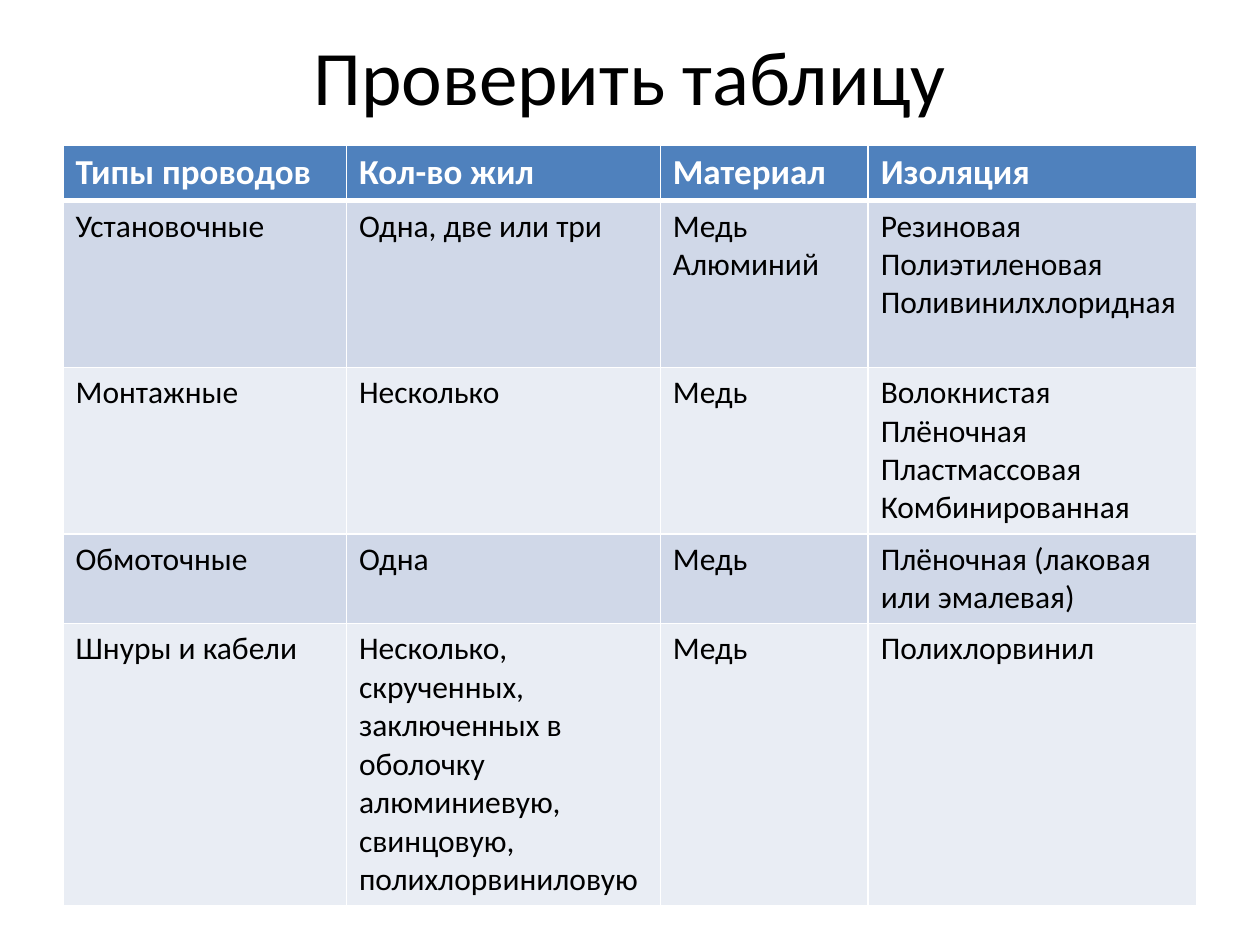
"""Build a slide with a table of wire types."""
from dataclasses import dataclass

from lxml import etree
from pptx import Presentation
from pptx.dml.color import RGBColor
from pptx.enum.text import MSO_ANCHOR, PP_ALIGN
from pptx.oxml.ns import qn
from pptx.slide import Slide
from pptx.table import Table, _Cell
from pptx.text.text import TextFrame
from pptx.util import Pt

LEFT, CENTER = PP_ALIGN.LEFT, PP_ALIGN.CENTER
TOP, MIDDLE = MSO_ANCHOR.TOP, MSO_ANCHOR.MIDDLE


@dataclass(frozen=True)
class Theme:
    font: str = "Calibri"
    black: str = "000000"
    white: str = "FFFFFF"
    head: str = "4F81BD"
    bands: tuple[str, str] = ("D0D8E8", "E9EDF4")
    title_size: float = 44
    head_size: float = 20
    body_size: float = 18
    thin: float = 1
    thick: float = 3


@dataclass(frozen=True)
class Row:
    cells: tuple[str, ...]
    lines: int


THEME = Theme()
TITLE = "Проверить таблицу"
WIDTHS = (162, 179.3, 118.8, 187.9)
HEAD_HIGH, LINE_HIGH, ROW_PAD = 31.6, 22, 7.2
HEAD = ("Типы проводов", "Кол-во жил", "Материал", "Изоляция")
ROWS = (
    Row(("Установочные", "Одна, две или три", "Медь\nАлюминий",
         "Резиновая\nПолиэтиленовая\nПоливинилхлоридная"), 4),
    Row(("Монтажные", "Несколько", "Медь",
         "Волокнистая\nПлёночная\nПластмассовая\nКомбинированная"), 4),
    Row(("Обмоточные", "Одна", "Медь", "Плёночная (лаковая или эмалевая)"), 2),
    Row(("Шнуры и кабели",
         "Несколько,\nскрученных, заключенных в оболочку алюминиевую, "
         "свинцовую, полихлорвиниловую", "Медь", "Полихлорвинил"), 7),
)


def write(frame: TextFrame, text: str, *, size: float, color: str = THEME.black,
          bold: bool = False, align: PP_ALIGN = LEFT) -> None:
    frame.text = text
    frame.word_wrap = True
    for para in frame.paragraphs:
        para.alignment = align
        for run in para.runs:
            font = run.font
            font.name, font.size, font.bold = THEME.font, Pt(size), bold
            font.color.rgb = RGBColor.from_string(color)


def edge(cell: _Cell, top: float, base: float) -> None:
    props = cell._tc.get_or_add_tcPr()
    sides = {"L": THEME.thin, "R": THEME.thin, "T": top, "B": base}
    for side, width in sides.items():
        line = etree.SubElement(props, qn(f"a:ln{side}"), w=str(Pt(width)))
        fill = etree.SubElement(line, qn("a:solidFill"))
        etree.SubElement(fill, qn("a:srgbClr"), val=THEME.white)


def draw_row(table: Table, index: int, cells: tuple[str, ...], high: float) -> None:
    table.rows[index].height = Pt(high)
    head = index == 0
    back = THEME.head if head else THEME.bands[(index - 1) % 2]
    for cell, text in zip(table.rows[index].cells, cells):
        edge(cell, THEME.thick if index == 1 else THEME.thin,
             THEME.thick if head else THEME.thin)
        cell.fill.solid()
        cell.fill.fore_color.rgb = RGBColor.from_string(back)
        cell.vertical_anchor = TOP
        write(cell.text_frame, text, bold=head,
              size=THEME.head_size if head else THEME.body_size,
              color=THEME.white if head else THEME.black)


def draw_title(slide: Slide) -> None:
    title = slide.shapes.title
    title.left, title.top = Pt(36), Pt(-2.2)
    title.width, title.height = Pt(648), Pt(90)
    title.text_frame.vertical_anchor = MIDDLE
    write(title.text_frame, TITLE, size=THEME.title_size, align=CENTER)


def draw_table(slide: Slide) -> None:
    highs = [HEAD_HIGH] + [row.lines * LINE_HIGH + ROW_PAD for row in ROWS]
    table = slide.shapes.add_table(
        len(highs), len(WIDTHS), Pt(36), Pt(83), Pt(sum(WIDTHS)), Pt(sum(highs))).table
    for column, width in zip(table.columns, WIDTHS):
        column.width = Pt(width)
    texts = [HEAD] + [row.cells for row in ROWS]
    for index, (cells, high) in enumerate(zip(texts, highs)):
        draw_row(table, index, cells, high)


def main() -> None:
    deck = Presentation()
    deck.slide_width, deck.slide_height = Pt(720), Pt(540)
    slide = deck.slides.add_slide(deck.slide_layouts[5])
    draw_title(slide)
    draw_table(slide)
    deck.save("out.pptx")


if __name__ == "__main__":
    main()
